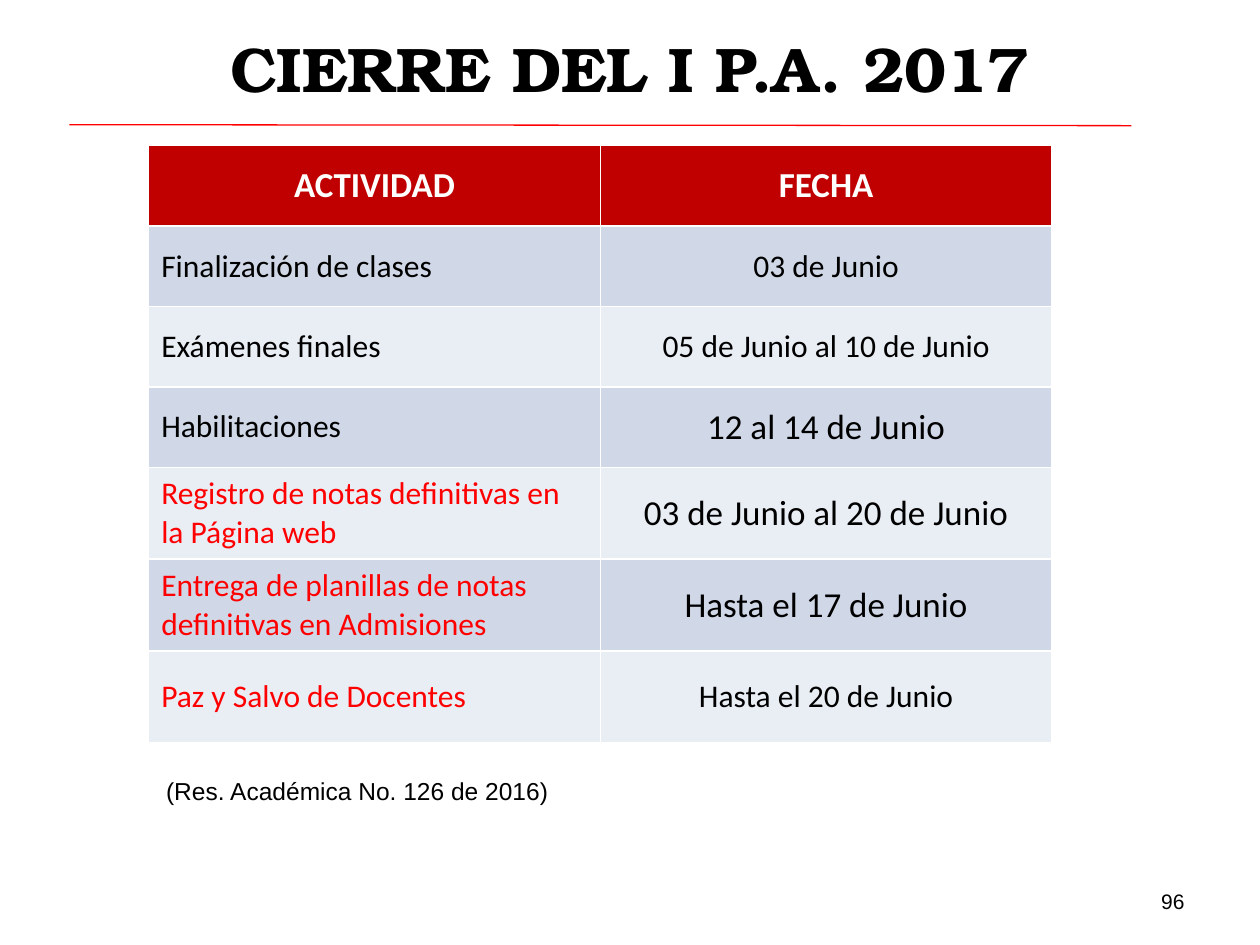
from pptx import Presentation
from pptx.dml.color import RGBColor
from pptx.enum.shapes import MSO_CONNECTOR
from pptx.enum.text import MSO_ANCHOR, PP_ALIGN
from pptx.oxml.ns import qn
from pptx.util import Inches, Pt
from lxml.etree import SubElement

BLACK = RGBColor(0x00, 0x00, 0x00)
WHITE = RGBColor(0xFF, 0xFF, 0xFF)
RED = RGBColor(0xFF, 0x00, 0x00)
DARK = RGBColor(0xC0, 0x00, 0x00)
BANDS = RGBColor(0xE9, 0xED, 0xF4), RGBColor(0xD0, 0xD8, 0xE8)

WIDE, HIGH = Inches(10), Inches(7.5)
HEAD = "ACTIVIDAD", "FECHA"
ROWS = [
    ("Finalización de clases", BLACK, "03 de Junio", 18),
    ("Exámenes finales", BLACK, "05 de Junio al 10 de Junio", 18),
    ("Habilitaciones", BLACK, "12 al 14 de Junio", 20),
    ("Registro de notas definitivas en la Página web", RED,
     "03 de Junio al 20 de Junio", 20),
    ("Entrega de planillas de notas definitivas en Admisiones", RED,
     "Hasta el 17 de Junio", 20),
    ("Paz y Salvo de Docentes", RED, "Hasta el 20 de Junio", 18),
]
TALL = [0.64] * 4 + [0.73] * 3


def share(left, top, width, height):
    return (int(WIDE * left), int(HIGH * top),
            int(WIDE * width), int(HIGH * height))


def write(frame, text, color, size, name, align=PP_ALIGN.LEFT, bold=False):
    line = frame.paragraphs[0]
    line.alignment = align
    run = line.add_run()
    run.text = text
    run.font.color.rgb = color
    looks = {"size": Pt(size), "name": name, "bold": bold}
    for key, value in looks.items():
        setattr(run.font, key, value)


def add_title(slide, box):
    title = slide.shapes.title
    for key, value in zip(("left", "top", "width", "height"), box):
        setattr(title, key, value)
    title.text_frame.vertical_anchor = MSO_ANCHOR.MIDDLE
    write(title.text_frame, "CIERRE DEL I P.A. 2017", BLACK, 36,
          "TeX Gyre Bonum", PP_ALIGN.CENTER, True)


def add_rule(slide, box):
    left, top, width, height = box
    rule = slide.shapes.add_connector(
        MSO_CONNECTOR.STRAIGHT, left, top, left + width, top + height)
    rule.line.color.rgb = RED
    rule.line.width = Pt(0.75)
    SubElement(rule._element.spPr, qn("a:effectLst"))


def fill_cell(cell, back, *look):
    cell.fill.solid()
    cell.fill.fore_color.rgb = back
    cell.vertical_anchor = MSO_ANCHOR.MIDDLE
    write(cell.text_frame, *look)


def add_dates(slide, box):
    grid = slide.shapes.add_table(len(TALL), len(HEAD), *box).table
    for row, tall in zip(grid.rows, TALL):
        row.height = int(box[3] * tall / sum(TALL))
    for col, text in enumerate(HEAD):
        fill_cell(grid.cell(0, col), DARK, text, WHITE, 20, "Calibri",
                  PP_ALIGN.CENTER, True)
    for row, (task, color, date, size) in enumerate(ROWS, 1):
        back = BANDS[row % 2]
        fill_cell(grid.cell(row, 0), back, task, color, 18, "Calibri")
        fill_cell(grid.cell(row, 1), back, date, BLACK, size, "Calibri",
                  PP_ALIGN.CENTER)


def add_note(slide, box, text, size, align, anchor):
    frame = slide.shapes.add_textbox(*box).text_frame
    frame.word_wrap = True
    frame.vertical_anchor = anchor
    write(frame, text, BLACK, size, "Arial", align)


def main():
    deck = Presentation()
    deck.slide_width, deck.slide_height = WIDE, HIGH
    slide = deck.slides.add_slide(deck.slide_layouts[5])
    add_title(slide, share(0, 0, 1, 0.143))
    add_note(slide, share(0.717, 0.927, 0.233, 0.053), "96", 12,
             PP_ALIGN.RIGHT, MSO_ANCHOR.MIDDLE)
    add_rule(slide, share(0.055, 0.132, 0.843, 0.001))
    add_dates(slide, share(0.118, 0.154, 0.717, 0.632))
    add_note(slide, share(0.122, 0.815, 0.336, 0.045),
             "(Res. Académica No. 126 de 2016)", 14,
             PP_ALIGN.LEFT, MSO_ANCHOR.TOP)
    deck.save("out.pptx")


if __name__ == "__main__":
    main()
